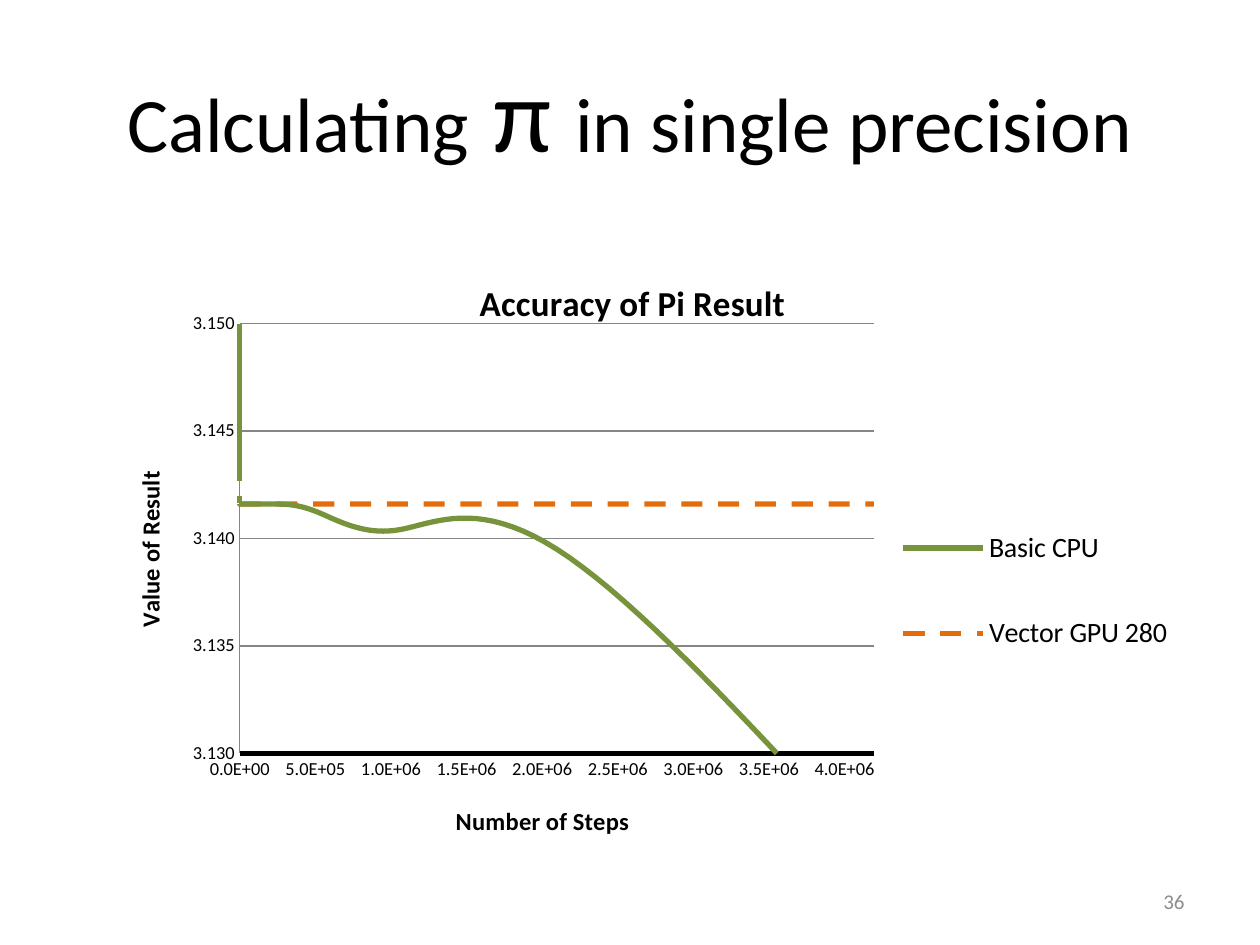
from lxml import etree
from pptx import Presentation
from pptx.chart.data import XyChartData
from pptx.dml.color import RGBColor
from pptx.enum.chart import XL_CHART_TYPE, XL_LEGEND_POSITION, XL_TICK_MARK
from pptx.enum.dml import MSO_LINE
from pptx.enum.text import MSO_ANCHOR, PP_ALIGN
from pptx.oxml.ns import qn
from pptx.util import Cm, Pt

SMOOTH_SCATTER = XL_CHART_TYPE.XY_SCATTER_SMOOTH_NO_MARKERS
LEGEND_RIGHT = XL_LEGEND_POSITION.RIGHT
NO_TICKS = XL_TICK_MARK.NONE
DASHED = MSO_LINE.DASH
MIDDLE = MSO_ANCHOR.MIDDLE
CENTER, RIGHT = PP_ALIGN.CENTER, PP_ALIGN.RIGHT

FONT = "Calibri"
BLACK, GRAY, AXIS_GRAY = "000000", "8C8C8C", "868686"
GREEN, ORANGE = "77933C", "E46C0A"

STEPS = [2 ** power for power in range(1, 23)]
CONVERGING = [3.1624, 3.1468, 3.1429, 3.1419, 3.1417] + [3.1416] * 13
SERIES = [
    ("Basic CPU", CONVERGING + [3.1412, 3.1404, 3.1395, 3.1251], GREEN, None),
    ("Vector GPU 280", CONVERGING + [3.1416] * 4, ORANGE, DASHED),
]


def color(hex_string):
    return RGBColor.from_string(hex_string)


def style_font(font, size, hex_string=BLACK, bold=False):
    font.name, font.size, font.bold = FONT, Pt(size), bold
    font.color.rgb = color(hex_string)


def style_line(line, hex_string, width):
    line.color.rgb = color(hex_string)
    line.width = Pt(width)


def add_text(page, place, pieces, align, hex_string=BLACK):
    """Add one line of text made of (text, size) pieces."""
    frame = page.shapes.add_textbox(*place).text_frame
    frame.word_wrap = True
    frame.vertical_anchor = MIDDLE
    para = frame.paragraphs[0]
    para.alignment = align
    for text, size in pieces:
        span = para.add_run()
        span.text = text
        style_font(span.font, size, hex_string)


def place_part(part, index, x, y, width=None, height=None, inner=False):
    """Give a chart part a manual layout, in fractions of the chart."""
    for old in part.findall(qn("c:layout")):
        part.remove(old)
    layout = etree.Element(qn("c:layout"))
    manual = etree.SubElement(layout, qn("c:manualLayout"))
    settings = [("layoutTarget", "inner" if inner else None),
                ("xMode", "edge"), ("yMode", "edge"),
                ("x", x), ("y", y), ("w", width), ("h", height)]
    for name, value in settings:
        if value is not None:
            etree.SubElement(manual, qn(f"c:{name}")).set("val", str(value))
    part.insert(index, layout)


def set_title(title, text, size, x, y):
    title.text_frame.text = text
    style_font(title.text_frame.paragraphs[0].runs[0].font, size, bold=True)
    place_part(title._element, 1, x, y)


def style_axis(axis, low, high, unit, number_format, line_color, line_width):
    axis.minimum_scale, axis.maximum_scale = low, high
    axis.major_unit = unit
    axis.major_tick_mark = axis.minor_tick_mark = NO_TICKS
    labels = axis.tick_labels
    labels.number_format = number_format
    labels.number_format_is_linked = False
    style_font(labels.font, 10.5)
    style_line(axis.format.line, line_color, line_width)


def smooth_curve(series):
    """Turn on smoothing, which scatter series offer only in XML."""
    series._element.get_or_add_smooth().set("val", "1")


def add_accuracy_chart(page, place):
    data = XyChartData()
    for name, values, _, _ in SERIES:
        series = data.add_series(name)
        for step, value in zip(STEPS, values):
            series.add_data_point(step, value)
    chart = page.shapes.add_chart(SMOOTH_SCATTER, *place, data).chart
    style_font(chart.font, 12)
    chart.plots[0].vary_by_categories = False
    for series, (_, _, hex_string, dash) in zip(chart.plots[0].series, SERIES):
        smooth_curve(series)
        style_line(series.format.line, hex_string, 3)
        if dash:
            series.format.line.dash_style = dash

    steps_axis, result_axis = chart.category_axis, chart.value_axis
    style_axis(steps_axis, 0, STEPS[-1], 500000, "0.0E+00", BLACK, 2.5)
    style_axis(result_axis, 3.13, 3.15, 0.005, "0.000", AXIS_GRAY, 0.75)
    steps_axis.has_major_gridlines = False
    result_axis.has_major_gridlines = True
    style_line(result_axis.major_gridlines.format.line, AXIS_GRAY, 0.75)

    set_title(chart.chart_title, "Accuracy of Pi Result", 20, 0.36, 0.03)
    set_title(steps_axis.axis_title, "Number of Steps", 14, 0.34, 0.84)
    set_title(result_axis.axis_title, "Value of Result", 14, 0.05, 0.33)
    body = result_axis.axis_title._element.find(".//" + qn("a:bodyPr"))
    body.set("rot", "-5400000")
    body.set("vert", "horz")

    chart.has_legend = True
    chart.legend.position = LEGEND_RIGHT
    chart.legend.include_in_layout = False
    style_font(chart.legend.font, 16)
    place_part(chart.legend._element, 1, 0.74, 0.35, 0.25, 0.34)
    plot_area = chart._chartSpace.find(".//" + qn("c:plotArea"))
    place_part(plot_area, 0, 0.15, 0.11, 0.57, 0.66, inner=True)


def main():
    deck = Presentation()
    deck.slide_width, deck.slide_height = Cm(25.4), Cm(19.05)
    page = deck.slides.add_slide(deck.slide_layouts[6])
    add_text(page, (Cm(1.27), Cm(0.64), Cm(22.86), Cm(3.18)),
             [("Calculating", 44), (" π ", 60), ("in single precision", 44)],
             CENTER)
    add_accuracy_chart(page, (Cm(1.47), Cm(5.08), Cm(22.43), Cm(13.13)))
    add_text(page, (Cm(18.2), Cm(17.65), Cm(5.93), Cm(1.02)),
             [("36", 12)], RIGHT, GRAY)
    deck.save("out.pptx")


if __name__ == "__main__":
    main()
